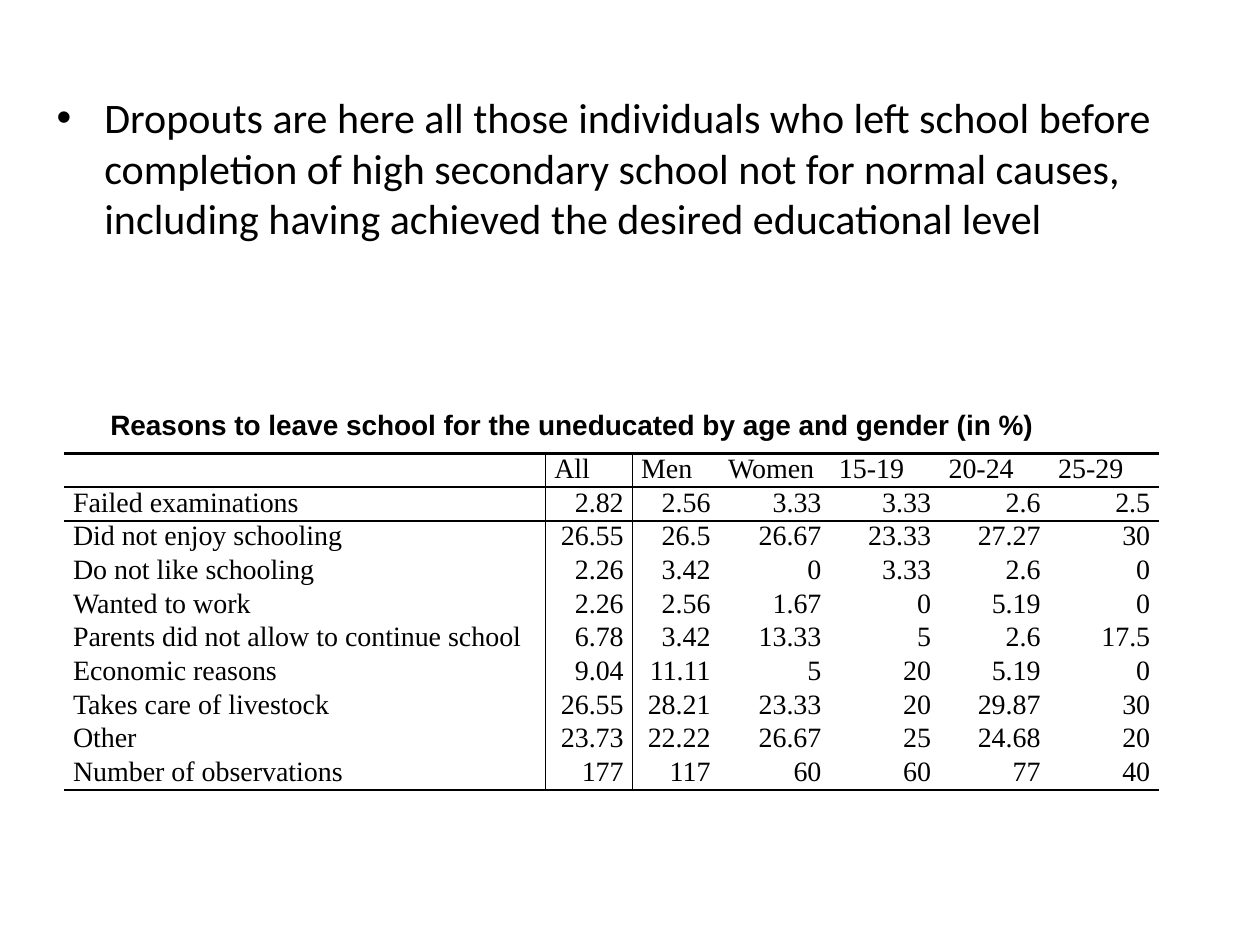
from lxml.etree import SubElement
from pptx import Presentation
from pptx.dml.color import RGBColor
from pptx.enum.text import MSO_ANCHOR, PP_ALIGN
from pptx.oxml.ns import qn
from pptx.util import Inches, Pt

COLORS = {"ink": "000000"}
NO_GRID_STYLE = "{2D5ABB26-0587-4C30-8999-92F81FD0307C}"
TABLE_SIZE = 16
COL_WIDTHS = [3.82, 0.69, 0.69, 0.88, 0.87, 0.87, 0.87]
ROW_HEIGHT = 0.18
REASONS = [
    ["", "All", "Men", "Women", "15-19", "20-24", "25-29"],
    ["Failed examinations", "2.82", "2.56", "3.33", "3.33", "2.6", "2.5"],
    ["Did not enjoy schooling", "26.55", "26.5", "26.67", "23.33", "27.27", "30"],
    ["Do not like schooling", "2.26", "3.42", "0", "3.33", "2.6", "0"],
    ["Wanted to work", "2.26", "2.56", "1.67", "0", "5.19", "0"],
    ["Parents did not allow to continue school",
     "6.78", "3.42", "13.33", "5", "2.6", "17.5"],
    ["Economic reasons", "9.04", "11.11", "5", "20", "5.19", "0"],
    ["Takes care of livestock", "26.55", "28.21", "23.33", "20", "29.87", "30"],
    ["Other", "23.73", "22.22", "26.67", "25", "24.68", "20"],
    ["Number of observations", "177", "117", "60", "60", "77", "40"],
]


def add_run(p, text, size, font, bold=False):
    r = p.add_run()
    r.text = text
    r.font.size = Pt(size)
    r.font.name = font
    r.font.bold = bold
    r.font.color.rgb = RGBColor.from_string(COLORS["ink"])


def add_text(s, left, top, width, height, anchor=MSO_ANCHOR.TOP):
    """Add a wrapping text box and return its first paragraph."""
    tf = s.shapes.add_textbox(
        Inches(left), Inches(top), Inches(width), Inches(height)).text_frame
    tf.word_wrap = True
    tf.vertical_anchor = anchor
    return tf.paragraphs[0]


def set_bullet(p, indent):
    pPr = p._p.get_or_add_pPr()
    pPr.set("marL", str(Inches(indent)))
    pPr.set("indent", str(-Inches(indent)))
    SubElement(pPr, qn("a:buFont")).set("typeface", "Arial")
    SubElement(pPr, qn("a:buChar")).set("char", "•")


def set_borders(cell, widths):
    """Draw cell edges; widths maps L, R, T, B to points, in that order."""
    tcPr = cell._tc.get_or_add_tcPr()
    for side, width in widths.items():
        ln = SubElement(tcPr, qn(f"a:ln{side}"), w=str(Pt(width)))
        fill = SubElement(ln, qn("a:solidFill"))
        SubElement(fill, qn("a:srgbClr")).set("val", COLORS["ink"])


def cell_borders(row, col):
    """Rules above and below the table, under the header, after the labels."""
    last = len(REASONS) - 1
    edges = {
        "L": 1 if col == 1 else 0,
        "R": 1 if col == 0 else 0,
        "T": {0: 1.5, 1: 1}.get(row, 0),
        "B": {0: 1, last: 1.5}.get(row, 0),
    }
    return {side: width for side, width in edges.items() if width}


def fill_cell(cell, text, row, col):
    cell.margin_left = cell.margin_right = Inches(0.07)
    cell.margin_top = cell.margin_bottom = 0
    p = cell.text_frame.paragraphs[0]
    if text:
        add_run(p, text, TABLE_SIZE, "Times New Roman")
    else:
        p._p.get_or_add_endParaRPr().set("sz", str(TABLE_SIZE * 100))
    if row and col:
        p.alignment = PP_ALIGN.RIGHT
    set_borders(cell, cell_borders(row, col))
    cell.fill.background()


def add_reasons_table(s, left, top):
    frame = s.shapes.add_table(
        len(REASONS), len(COL_WIDTHS), Inches(left), Inches(top),
        Inches(sum(COL_WIDTHS)), Inches(ROW_HEIGHT * len(REASONS)))
    table = frame.table
    table.first_row = table.horz_banding = False
    table._tbl.tblPr.find(qn("a:tableStyleId")).text = NO_GRID_STYLE
    for column, width in zip(table.columns, COL_WIDTHS):
        column.width = Inches(width)
    for i, values in enumerate(REASONS):
        table.rows[i].height = Inches(ROW_HEIGHT)
        for j, text in enumerate(values):
            fill_cell(table.cell(i, j), text, i, j)


def main():
    prs = Presentation()
    prs.slide_width, prs.slide_height = Inches(10), Inches(7.5)
    s = prs.slides.add_slide(prs.slide_layouts[6])

    # Table heading
    p = add_text(s, 0.04, 2.74, 9, 1.25, MSO_ANCHOR.MIDDLE)
    p.alignment = PP_ALIGN.CENTER
    add_run(p, "Reasons to leave school for the uneducated by age and gender (in %)",
            16, "Arial", bold=True)

    # Table of reasons
    add_reasons_table(s, 0.51, 3.6)

    # Definition of dropouts
    p = add_text(s, 0.35, 0.68, 9.21, 1.65)
    set_bullet(p, 0.38)
    add_run(p, "Dropouts are here all those individuals who left school before "
            "completion of high secondary school not for normal causes, "
            "including having achieved the desired educational level",
            24, "Calibri")

    prs.save("out.pptx")


if __name__ == "__main__":
    main()
